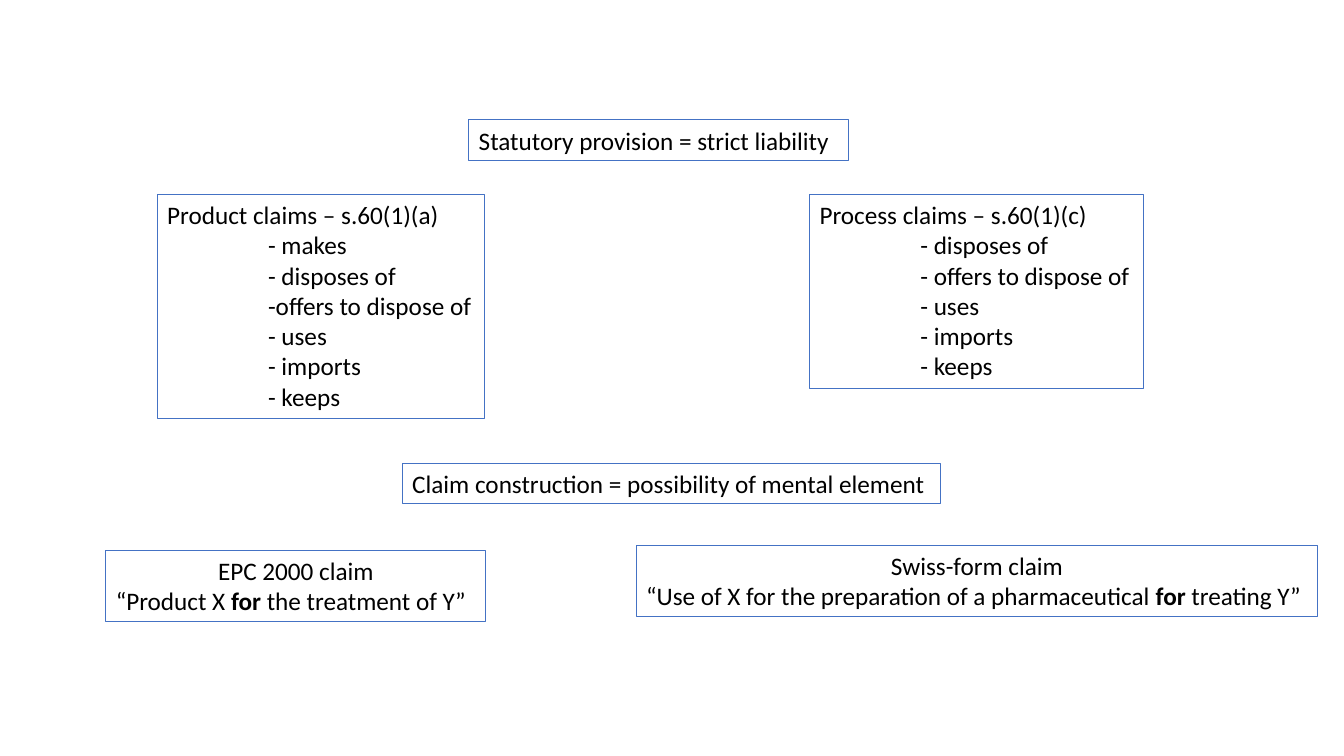
from pptx import Presentation
from pptx.dml.color import RGBColor
from pptx.enum.text import MSO_ANCHOR, PP_ALIGN
from pptx.util import Emu, Pt

PX = 9144
CENTER, LEFT = PP_ALIGN.CENTER, PP_ALIGN.LEFT
TOP = MSO_ANCHOR.TOP
COLORS = {"border": "4472C4", "text": "000000"}
FONT = "Calibri"
TEXT_SIZE = 18
ACT_INDENT = 100

HEADINGS = [
    ((465, 119, 377, 40), "Statutory provision = strict liability"),
    ((399, 460, 534, 40), "Claim construction = possibility of mental element"),
]
PROVISIONS = [
    ((156, 193, 325, 222), "Product claims – s.60(1)(a)",
     ["- makes", "- disposes of", "-offers to dispose of", "- uses", "- imports", "- keeps"]),
    ((803, 193, 331, 192), "Process claims – s.60(1)(c)",
     ["- disposes of", "- offers to dispose of", "- uses", "- imports", "- keeps"]),
]
CLAIM_FORMS = [
    ((105, 546, 377, 71), "EPC 2000 claim",
     ["“Product X ", "for", " the treatment of Y”"]),
    ((631, 541, 676, 71), "Swiss-form claim",
     ["“Use of X for the preparation of a pharmaceutical ", "for ", "treating Y”"]),
]


def px(length):
    return Emu(length * PX)


def color(name):
    return RGBColor.from_string(COLORS[name])


def add_bordered_box(slide, box):
    shape = slide.shapes.add_textbox(*map(px, box))
    shape.line.color.rgb = color("border")
    shape.line.width = Pt(0.75)
    shape.text_frame.word_wrap = True
    shape.text_frame.vertical_anchor = TOP
    return shape.text_frame


def write(paragraph, text="", alignment=LEFT):
    paragraph.text = text
    paragraph.alignment = alignment
    paragraph.font.name = FONT
    paragraph.font.size = Pt(TEXT_SIZE)
    paragraph.font.color.rgb = color("text")
    return paragraph


def add_heading(slide, box, text):
    write(add_bordered_box(slide, box).paragraphs[0], text)


def add_provision(slide, box, title, acts):
    frame = add_bordered_box(slide, box)
    write(frame.paragraphs[0], title)
    for act in acts:
        paragraph = write(frame.add_paragraph(), act)
        paragraph._p.get_or_add_pPr().set("marL", str(px(ACT_INDENT)))


def add_claim_form(slide, box, title, wording):
    frame = add_bordered_box(slide, box)
    write(frame.paragraphs[0], title, CENTER)
    paragraph = write(frame.add_paragraph())
    for index, text in enumerate(wording):
        run = paragraph.add_run()
        run.text = text
        run.font.bold = index == 1


def main():
    presentation = Presentation()
    presentation.slide_width = px(1333)
    presentation.slide_height = px(750)
    slide = presentation.slides.add_slide(presentation.slide_layouts[6])
    for heading in HEADINGS:
        add_heading(slide, *heading)
    for provision in PROVISIONS:
        add_provision(slide, *provision)
    for claim_form in CLAIM_FORMS:
        add_claim_form(slide, *claim_form)
    presentation.save("out.pptx")


if __name__ == "__main__":
    main()
